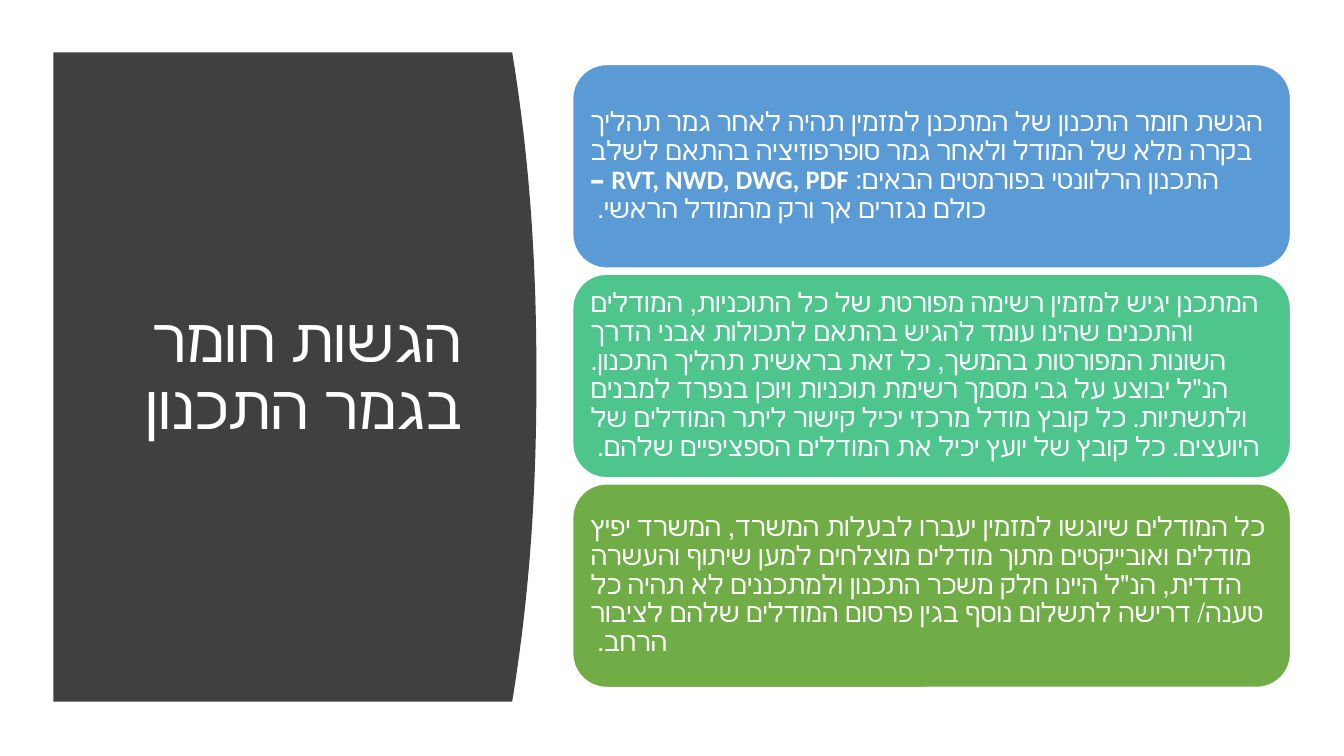
from dataclasses import dataclass

from pptx import Presentation
from pptx.dml.color import RGBColor
from pptx.enum.shapes import MSO_SHAPE
from pptx.enum.text import MSO_ANCHOR, PP_ALIGN
from pptx.util import Inches, Pt


@dataclass(frozen=True)
class Theme:
    font: str = "Calibri"
    white: str = "FFFFFF"
    dark: str = "404040"
    blue: str = "5B9BD5"
    teal: str = "4DC58D"
    green: str = "70AD47"
    head: int = 44
    body: int = 19


theme = Theme()


def paint(shape, color):
    shape.shadow.inherit = False
    shape.fill.solid()
    shape.fill.fore_color.rgb = RGBColor.from_string(color)


def write(shape, runs, size, align, inset=None, after=0):
    """Fill a shape with one right-to-left paragraph of (text, bold) runs."""
    frame = shape.text_frame
    frame.word_wrap = True
    frame.vertical_anchor = MSO_ANCHOR.MIDDLE
    if inset is not None:
        frame.margin_left = frame.margin_right = Inches(inset)
        frame.margin_top = frame.margin_bottom = Inches(inset)
    para = frame.paragraphs[0]
    para.alignment = align
    para.line_spacing = 0.9
    para.space_after = Pt(after)
    para._p.get_or_add_pPr().set("rtl", "1")
    for text, bold in runs:
        run = para.add_run()
        run.text = text
        font = run.font
        font.name, font.size, font.bold = theme.font, Pt(size), bold
        font.color.rgb = RGBColor.from_string(theme.white)


deck = Presentation()
deck.slide_width, deck.slide_height = Inches(13.33), Inches(7.5)
slide = deck.slides.add_slide(deck.slide_layouts[6])
shapes = slide.shapes

# Dark panel whose right edge bulges outwards
left, top, bottom = 0.53, 0.52, 6.96
peak, bulge, steps = 5.32, 0.24, 40
half = (bottom - top) / 2
edge = []
for step in range(steps + 1):
    turn = 2 * step / steps - 1
    x = peak - bulge * abs(turn) ** 2.2
    edge.append((Inches(x), Inches(top + half * (turn + 1))))
pen = shapes.build_freeform(Inches(left), Inches(top))
pen.add_line_segments(edge + [(Inches(left), Inches(bottom))], close=True)
panel = pen.convert_to_shape()
paint(panel, theme.dark)
panel.line.fill.background()

title = shapes.add_textbox(Inches(0.94), Inches(1.11), Inches(3.74), Inches(5.24))
write(title, [("הגשות חומר בגמר התכנון", False)], theme.head, PP_ALIGN.RIGHT)

cards = [
    (theme.blue, [
        ("הגשת חומר התכנון של המתכנן למזמין תהיה לאחר גמר תהליך בקרה מלא של "
         "המודל ולאחר גמר סופרפוזיציה בהתאם לשלב התכנון הרלוונטי בפורמטים "
         "הבאים: ", False),
        ("RVT, NWD, DWG, PDF – ", True),
        ("כולם נגזרים אך ורק מהמודל הראשי. ", False),
    ]),
    (theme.teal, [
        ("המתכנן יגיש למזמין רשימה מפורטת של כל התוכניות, המודלים והתכנים "
         "שהינו עומד להגיש בהתאם לתכולות אבני הדרך השונות המפורטות בהמשך, "
         "כל זאת בראשית תהליך התכנון. הנ\"ל יבוצע על גבי מסמך רשימת תוכניות "
         "ויוכן בנפרד למבנים ולתשתיות. כל קובץ מודל מרכזי יכיל קישור ליתר "
         "המודלים של היועצים. כל קובץ של יועץ יכיל את המודלים הספציפיים "
         "שלהם. ", False),
    ]),
    (theme.green, [
        ("כל המודלים שיוגשו למזמין יעברו לבעלות המשרד, המשרד יפיץ מודלים "
         "ואובייקטים מתוך מודלים מוצלחים למען שיתוף והעשרה הדדית, הנ\"ל "
         "היינו חלק משכר התכנון ולמתכננים לא תהיה כל טענה/ דרישה לתשלום "
         "נוסף בגין פרסום המודלים שלהם לציבור הרחב. ", False),
    ]),
]
first, pitch = 0.64, 2.08
for row, (color, runs) in enumerate(cards):
    card = shapes.add_shape(
        MSO_SHAPE.ROUNDED_RECTANGLE,
        Inches(5.68), Inches(first + row * pitch), Inches(7.12), Inches(2.02))
    paint(card, color)
    card.line.color.rgb = RGBColor.from_string(theme.white)
    card.line.width = Pt(1)
    write(card, runs, theme.body, PP_ALIGN.LEFT, inset=0.08, after=6.65)

deck.save("out.pptx")
